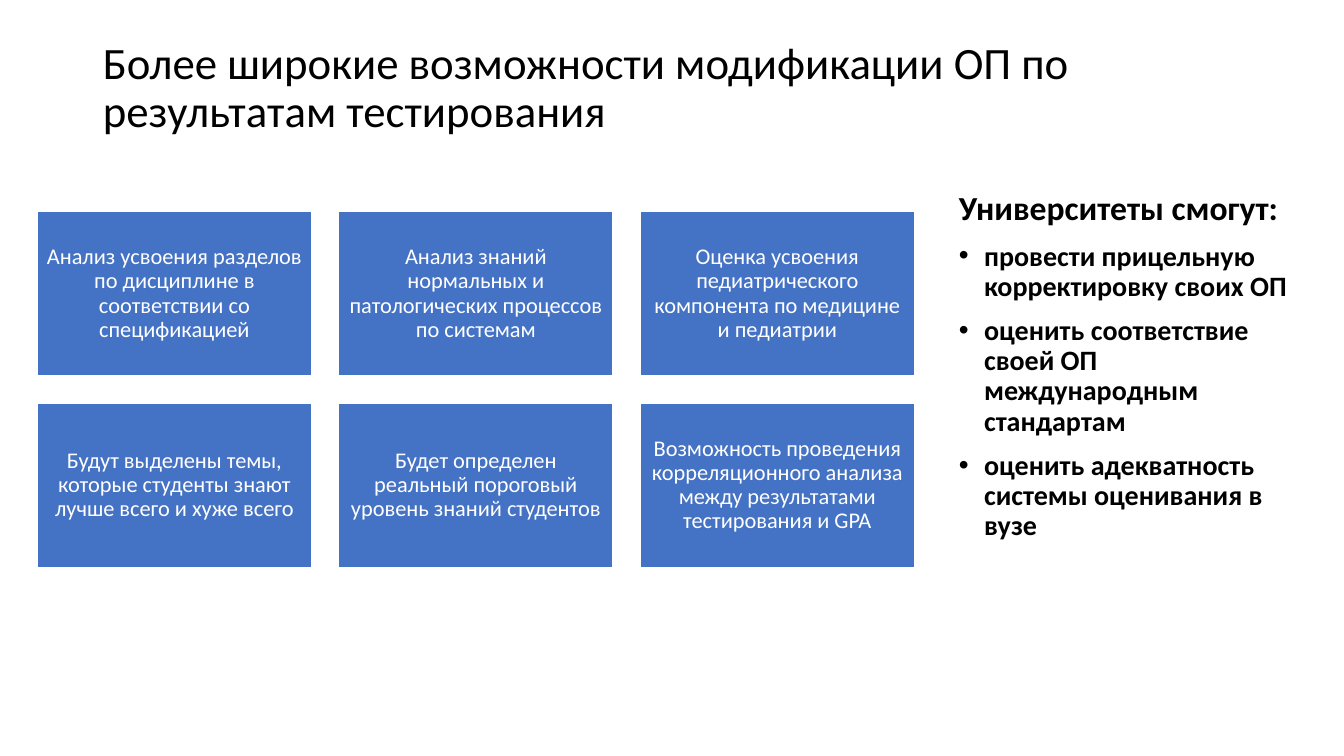
"""Build a slide on using test results to modify study programmes."""
from pptx import Presentation, util as u
from pptx.dml.color import RGBColor
from pptx.enum import shapes, text
from pptx.oxml.ns import qn

BLUE = RGBColor(0x44, 0x72, 0xC4)
WHITE = RGBColor(255, 255, 255)
BLACK = RGBColor(0, 0, 0)

TITLE = "Более широкие возможности модификации ОП по результатам тестирования"
CARDS = [
    "Анализ усвоения разделов по дисциплине в соответствии со спецификацией",
    "Анализ знаний нормальных и патологических процессов по системам",
    "Оценка усвоения педиатрического компонента по медицине и педиатрии",
    "Будут выделены темы, которые студенты знают лучше всего и хуже всего",
    "Будет определен реальный пороговый уровень знаний студентов",
    "Возможность проведения корреляционного анализа между результатами тестирования и GPA",
]
HEAD = "Университеты смогут:"
GOALS = [
    "провести прицельную корректировку своих ОП",
    "оценить соответствие своей ОП международным стандартам",
    "оценить адекватность системы оценивания в вузе",
]


def put(item, **vals):
    for name, val in vals.items():
        setattr(item, name, val)


def write(par, words, size, color, bold=False, **vals):
    run = par.add_run()
    run.text = words
    put(run.font, name="Calibri", size=u.Pt(size), bold=bold)
    run.font.color.rgb = color
    put(par, line_spacing=0.9, **vals)


deck = Presentation()
put(deck, slide_width=u.Inches(13.33), slide_height=u.Inches(7.5))
slide = deck.slides.add_slide(deck.slide_layouts[1])
title, body = slide.placeholders

put(title, left=u.Inches(0.92), top=u.Inches(0.4),
    width=u.Inches(11.5), height=u.Inches(1.45))
put(title.text_frame, margin_top=0, vertical_anchor=text.MSO_ANCHOR.TOP,
    auto_size=text.MSO_AUTO_SIZE.NONE)
write(title.text_frame.paragraphs[0], TITLE, 32, BLACK,
      alignment=text.PP_ALIGN.LEFT)

COLS, LEFT, TOP = 3, 0.37, 2.1
WIDE, HIGH, GAP = 2.72, 1.63, 0.27
inset = u.Inches(0.07)
for i, words in enumerate(CARDS):
    row, col = divmod(i, COLS)
    card = slide.shapes.add_shape(
        shapes.MSO_SHAPE.RECTANGLE,
        u.Inches(LEFT + col * (WIDE + GAP)), u.Inches(TOP + row * (HIGH + GAP)),
        u.Inches(WIDE), u.Inches(HIGH))
    card.shadow.inherit = False
    card.fill.solid()
    card.fill.fore_color.rgb = BLUE
    card.line.color.rgb = WHITE
    card.line.width = u.Pt(1)
    put(card.text_frame, word_wrap=True, margin_left=inset, margin_right=inset,
        margin_top=inset, margin_bottom=inset,
        vertical_anchor=text.MSO_ANCHOR.MIDDLE)
    write(card.text_frame.paragraphs[0], words, 16, WHITE,
          alignment=text.PP_ALIGN.CENTER)

put(body, left=u.Inches(9.41), top=u.Inches(1.85),
    width=u.Inches(3.55), height=u.Inches(4.76))
frame = body.text_frame
frame.auto_size = text.MSO_AUTO_SIZE.NONE
head = frame.paragraphs[0]
write(head, HEAD, 24, BLACK, True, space_before=u.Pt(10))
props = head._p.get_or_add_pPr()
props.set("marL", "0")
props.set("indent", "0")
props.append(props.makeelement(qn("a:buNone"), {}))

hang = u.Inches(0.25)
for words in GOALS:
    goal = frame.add_paragraph()
    write(goal, words, 20, BLACK, True, space_before=u.Pt(10))
    props = goal._p.get_or_add_pPr()
    props.set("marL", str(hang))
    props.set("indent", str(-hang))
    props.append(props.makeelement(qn("a:buChar"), {"char": "•"}))

deck.save("out.pptx")
